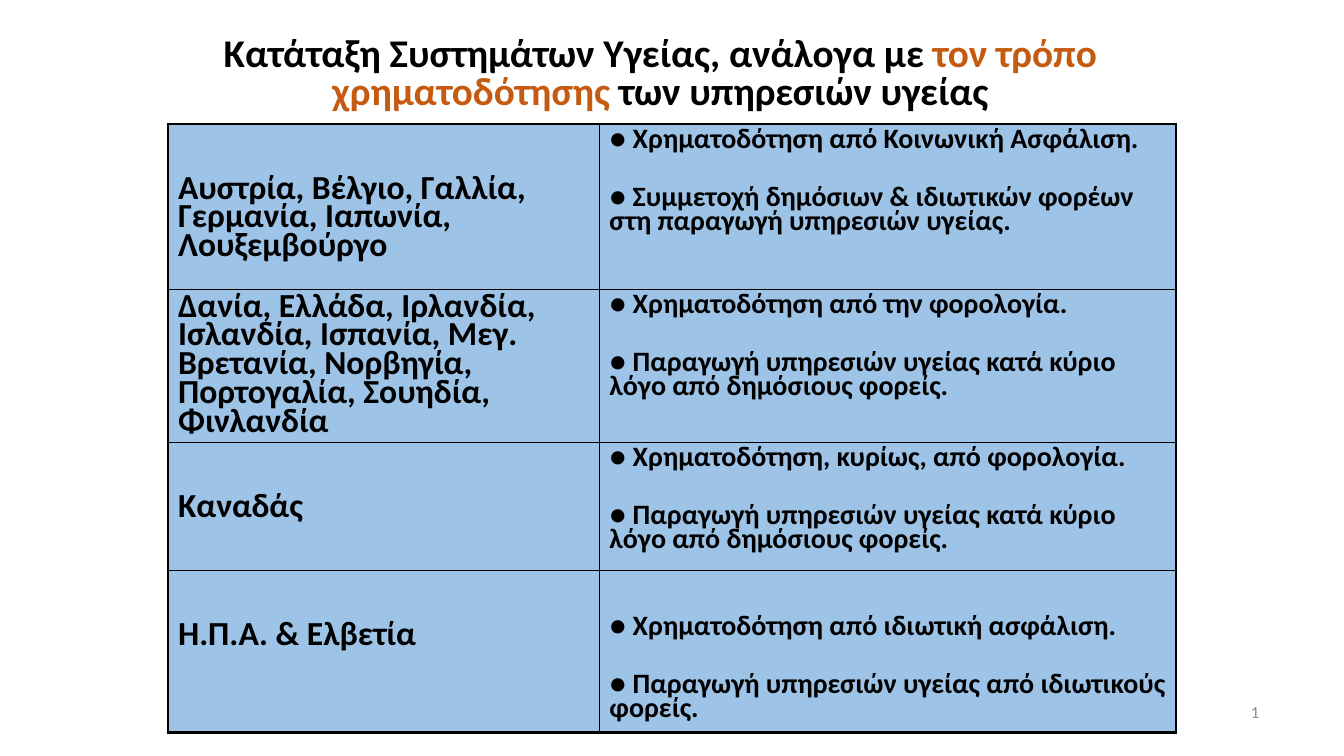
from lxml.etree import SubElement
from pptx import Presentation
from pptx.dml.color import RGBColor
from pptx.enum.text import MSO_ANCHOR, PP_ALIGN
from pptx.oxml.ns import qn
from pptx.util import Inches, Pt

BLACK = RGBColor(0x00, 0x00, 0x00)
ORANGE = RGBColor(0xC5, 0x5A, 0x11)
GREY = RGBColor(0x8C, 0x8C, 0x8C)
BLUE = RGBColor(0x9D, 0xC3, 0xE6)

OUTER, INNER = 2.25, 1
BULLET_GAP = Pt(24.3)

# Table content: countries, their top margin, features, their top margin (inches)
SYSTEMS = [
    ("Αυστρία, Βέλγιο, Γαλλία, Γερμανία, Ιαπωνία, Λουξεμβούργο", 0.52,
     ["● Χρηματοδότηση από Κοινωνική Ασφάλιση.",
      "● Συμμετοχή δημόσιων & ιδιωτικών φορέων στη παραγωγή υπηρεσιών υγείας."], 0.05),
    ("Δανία, Ελλάδα, Ιρλανδία, Ισλανδία, Ισπανία, Μεγ. Βρετανία, Νορβηγία, "
     "Πορτογαλία, Σουηδία, Φινλανδία", 0.05,
     ["● Χρηματοδότηση από την φορολογία.",
      "● Παραγωγή υπηρεσιών υγείας κατά κύριο λόγο από δημόσιους φορείς."], 0.05),
    ("Καναδάς", 0.52,
     ["● Χρηματοδότηση, κυρίως, από φορολογία.",
      "● Παραγωγή υπηρεσιών υγείας κατά κύριο λόγο από δημόσιους φορείς."], 0.05),
    ("Η.Π.Α. & Ελβετία", 0.52,
     ["● Χρηματοδότηση από ιδιωτική ασφάλιση.",
      "● Παραγωγή υπηρεσιών υγείας από ιδιωτικούς φορείς."], 0.45),
]


def apply(target, values):
    for name, value in values.items():
        setattr(target, name, value)


class SlideBuilder:
    """Holds the font and the current slide; lengths are percent of its size."""

    font_name = "Calibri"

    def __init__(self, presentation):
        self.width = presentation.slide_width
        self.height = presentation.slide_height
        self.slide = presentation.slides.add_slide(presentation.slide_layouts[6])

    def across(self, percent):
        return round(self.width * percent / 100)

    def down(self, percent):
        return round(self.height * percent / 100)

    def box(self, left, top, width, height):
        return self.across(left), self.down(top), self.across(width), self.down(height)

    def add_runs(self, paragraph, runs, size, bold, **layout):
        apply(paragraph, layout)
        for text, color in runs:
            run = paragraph.add_run()
            run.text = text
            apply(run.font, {"name": self.font_name, "size": Pt(size), "bold": bold})
            run.font.color.rgb = color

    def text(self, area, runs, size, bold=False, **layout):
        frame = self.slide.shapes.add_textbox(*self.box(*area)).text_frame
        apply(frame, {"word_wrap": True, "vertical_anchor": MSO_ANCHOR.MIDDLE})
        self.add_runs(frame.paragraphs[0], runs, size, bold, **layout)

    def table(self, area, columns, rows):
        shape = self.slide.shapes.add_table(len(rows), len(columns), *self.box(*area))
        table = shape.table
        apply(table, {"first_row": False, "horz_banding": False})
        for column, width in zip(table.columns, columns):
            column.width = self.across(width)
        for row, height in zip(table.rows, rows):
            row.height = self.down(height)
        return table

    def cell(self, cell, texts, size, top_margin, borders):
        cell.margin_top = Inches(top_margin)
        frame = cell.text_frame
        for index, text in enumerate(texts):
            paragraph = frame.add_paragraph() if index else frame.paragraphs[0]
            self.add_runs(paragraph, [(text, BLACK)], size, True, line_spacing=0.7,
                          space_before=BULLET_GAP if index else Pt(0))
        self.borders(cell, borders)
        cell.fill.solid()
        cell.fill.fore_color.rgb = BLUE

    def borders(self, cell, widths):
        properties = cell._tc.get_or_add_tcPr()
        for side, width in zip("LRTB", widths):
            line = SubElement(properties, qn(f"a:ln{side}"), w=str(Pt(width)))
            fill = SubElement(line, qn("a:solidFill"))
            SubElement(fill, qn("a:srgbClr"), val=str(BLACK))


def main():
    presentation = Presentation()
    apply(presentation, {"slide_width": Inches(13.33), "slide_height": Inches(7.5)})
    builder = SlideBuilder(presentation)

    # Slide number
    builder.text((73.6, 90.8, 20.85, 6.67), [("1", GREY)], 12, alignment=PP_ALIGN.RIGHT)

    # Title
    builder.text((13.5, 5.33, 71.25, 9.2),
                 [("Κατάταξη Συστημάτων Υγείας, ανάλογα με ", BLACK),
                  ("τον τρόπο χρηματοδότησης", ORANGE),
                  (" των υπηρεσιών υγείας", BLACK)],
                 28, bold=True, alignment=PP_ALIGN.CENTER, line_spacing=0.8)

    # Health systems table
    table = builder.table((12.5, 16.4, 75, 80.54), (32.1, 42.9),
                          (21.87, 20.27, 16.93, 21.47))
    last = len(SYSTEMS) - 1
    for index, (countries, left_top, features, right_top) in enumerate(SYSTEMS):
        edges = (OUTER if index == 0 else INNER, OUTER if index == last else INNER)
        builder.cell(table.cell(index, 0), [countries], 24, left_top, (OUTER, INNER, *edges))
        builder.cell(table.cell(index, 1), features, 20, right_top, (INNER, OUTER, *edges))

    presentation.save("out.pptx")


if __name__ == "__main__":
    main()
